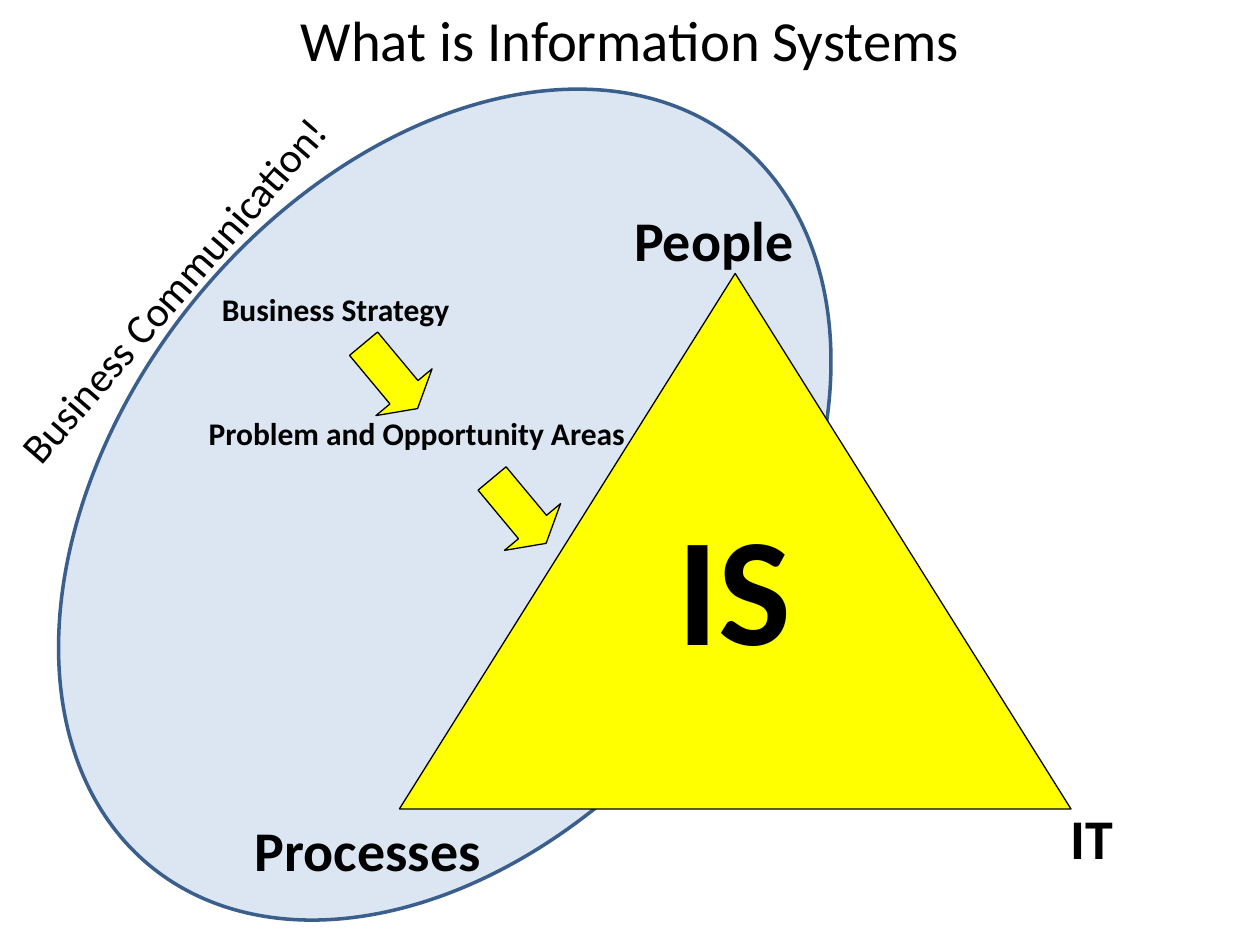
from pptx import Presentation
from pptx.dml.color import RGBColor
from pptx.enum.shapes import MSO_SHAPE
from pptx.enum.text import MSO_ANCHOR, PP_ALIGN
from pptx.util import Inches, Pt

THEME = {
    "font": "Calibri",
    "text": "000000", "outline": "000000", "highlight": "FFFF00",
    "oval": "DCE6F2", "oval_line": "3A5F8C",
    "title": 32.4, "corner": 32, "core": 88, "step": 18, "side": 24,
}

# Boxes are left, top, width, height in inches
TITLE = ("What is Information Systems", (0.5, 0, 9, 0.62))
SIDE_NOTE = ("Business Communication!", (-0.49, 2.01, 3.79, 0.5))
LABELS = [
    ("People", (4.83, 1.58, 1.67, 0.64), "corner"),
    ("Processes", (1.92, 6.42, 2, 0.64), "corner"),
    ("IT", (8, 6.33, 1.33, 0.64), "corner"),
    ("IS", (4.83, 3.85, 2, 1.57), "core"),
    ("Business Strategy", (1.25, 2.25, 2.83, 0.4), "step"),
    ("Problem and Opportunity Areas", (1.33, 3.24, 3.96, 0.4), "step"),
]
OVAL = (-0.17, 1.44, 7.4, 5.13)
TRIANGLE = (3.17, 2.17, 5.33, 4.25)
ARROW_SIZE = (0.58, 0.67)
ARROW_CORNERS = [(2.81, 2.65), (3.83, 3.72)]


def add_text(slide, text, box, size, bold=False, align=PP_ALIGN.CENTER,
             anchor=MSO_ANCHOR.TOP, rotation=0):
    sp = slide.shapes.add_textbox(*map(Inches, box))
    sp.rotation = rotation
    tf = sp.text_frame
    tf.word_wrap = True
    tf.vertical_anchor = anchor
    p = tf.paragraphs[0]
    p.alignment = align
    r = p.add_run()
    r.text = text
    r.font.name = THEME["font"]
    r.font.size = Pt(THEME[size])
    r.font.bold = bold
    r.font.color.rgb = RGBColor.from_string(THEME["text"])


def add_figure(slide, kind, box, fill="highlight", line="outline",
               width=0.75, rotation=0):
    sp = slide.shapes.add_shape(kind, *map(Inches, box))
    sp.shadow.inherit = False
    sp.rotation = rotation
    sp.fill.solid()
    sp.fill.fore_color.rgb = RGBColor.from_string(THEME[fill])
    sp.line.color.rgb = RGBColor.from_string(THEME[line])
    sp.line.width = Pt(width)
    return sp


def main():
    prs = Presentation()
    prs.slide_width, prs.slide_height = Inches(10), Inches(7.5)
    s = prs.slides.add_slide(prs.slide_layouts[6])

    add_figure(s, MSO_SHAPE.OVAL, OVAL, fill="oval", line="oval_line",
               width=2, rotation=309)
    add_text(s, *TITLE, "title", anchor=MSO_ANCHOR.MIDDLE)
    add_figure(s, MSO_SHAPE.ISOSCELES_TRIANGLE, TRIANGLE)
    for text, box, size in LABELS:
        add_text(s, text, box, size, bold=True)
    for corner in ARROW_CORNERS:
        arrow = add_figure(s, MSO_SHAPE.DOWN_ARROW, corner + ARROW_SIZE,
                           rotation=320.2)
        arrow.adjustments[1] = 0.29
    add_text(s, *SIDE_NOTE, "side", align=PP_ALIGN.LEFT, rotation=310.9)

    prs.save("out.pptx")


if __name__ == "__main__":
    main()
